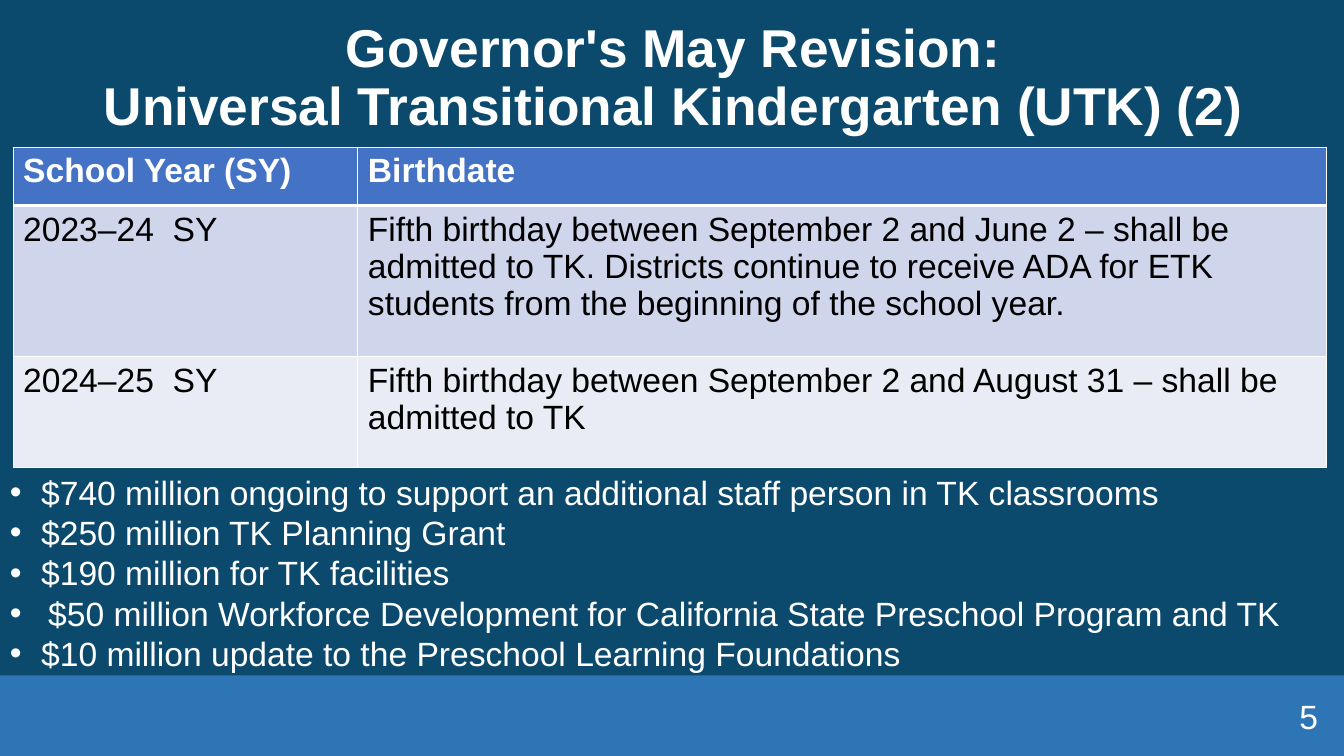
from dataclasses import dataclass

from lxml import etree
from pptx import Presentation
from pptx.dml.color import RGBColor
from pptx.enum.shapes import MSO_SHAPE
from pptx.enum.text import MSO_ANCHOR, PP_ALIGN
from pptx.oxml.ns import qn
from pptx.util import Inches, Pt

RECTANGLE = MSO_SHAPE.RECTANGLE
MIDDLE = MSO_ANCHOR.MIDDLE
LEFT, CENTER, RIGHT = PP_ALIGN.LEFT, PP_ALIGN.CENTER, PP_ALIGN.RIGHT
TITLE_ONLY = 5


@dataclass(frozen=True)
class Theme:
    font: str = "Arial"
    title_size: int = 38
    body_size: int = 24
    background: str = "0C4A6D"
    footer: str = "2E75B6"
    light: str = "FFFFFF"
    dark: str = "000000"
    header_fill: str = "4472C4"
    row_fills: tuple = ("CFD5EA", "E9EBF5")
    border: int = 1
    header_border: int = 3


THEME = Theme()

TITLE_LINES = ("Governor's May Revision:", "Universal Transitional Kindergarten (UTK) (2)")
COLUMN_WIDTHS = (3.42, 9.61)
ROW_HEIGHTS = (0.58, 1.5, 1.1)
BIRTHDATE_ROWS = (
    ("School Year (SY)", "Birthdate"),
    ("2023–24  SY",
     "Fifth birthday between September 2 and June 2 – shall be admitted to TK. "
     "Districts continue to receive ADA for ETK students from the beginning of the school year."),
    ("2024–25  SY",
     "Fifth birthday between September 2 and August 31 – shall be admitted to TK"),
)
FUNDING = (
    ("$740 million ongoing to support an additional staff person in TK classrooms", 0.31),
    ("$250 million TK Planning Grant", 0.31),
    ("$190 million for TK facilities", 0.31),
    ("$50 million Workforce Development for California State Preschool Program and TK", 0.38),
    ("$10 million update to the Preschool Learning Foundations", 0.31),
)


def color(value):
    return RGBColor.from_string(value)


def format_paragraph(paragraph, size, font_color, bold=False, alignment=LEFT):
    paragraph.alignment = alignment
    paragraph.font.name = THEME.font
    paragraph.font.size = Pt(size)
    paragraph.font.bold = bold
    paragraph.font.color.rgb = color(font_color)


def add_footer_band(slide):
    band = slide.shapes.add_shape(RECTANGLE, 0, Inches(6.7), Inches(13.33), Inches(0.8))
    band.shadow.inherit = False
    band.fill.solid()
    band.fill.fore_color.rgb = color(THEME.footer)
    band.line.fill.background()


def set_title(slide, lines):
    title = slide.shapes.title
    title.left, title.top = Inches(0.18), Inches(0.2)
    title.width, title.height = Inches(13), Inches(1.17)
    title.text_frame.vertical_anchor = MIDDLE
    paragraph = title.text_frame.paragraphs[0]
    for index, line in enumerate(lines):
        if index:
            paragraph.add_line_break()
        paragraph.add_run().text = line
    paragraph.line_spacing = 0.9
    format_paragraph(paragraph, THEME.title_size, THEME.light, True, CENTER)


def set_border(cell, side, width):
    properties = cell._tc.get_or_add_tcPr()
    line = etree.SubElement(properties, qn(f"a:ln{side}"), w=str(Pt(width)))
    fill = etree.SubElement(line, qn("a:solidFill"))
    etree.SubElement(fill, qn("a:srgbClr"), val=THEME.light)


def border_width(row_index, side):
    below_header = (row_index, side) in ((0, "B"), (1, "T"))
    return THEME.header_border if below_header else THEME.border


def add_birthdate_table(slide, rows):
    frame = slide.shapes.add_table(
        len(rows), len(COLUMN_WIDTHS), Inches(0.13), Inches(1.46),
        Inches(sum(COLUMN_WIDTHS)), Inches(sum(ROW_HEIGHTS)))
    table = frame.table
    for column, width in zip(table.columns, COLUMN_WIDTHS):
        column.width = Inches(width)
    for row, height in zip(table.rows, ROW_HEIGHTS):
        row.height = Inches(height)
    fills = (THEME.header_fill, *THEME.row_fills)
    for row_index, (texts, fill) in enumerate(zip(rows, fills)):
        is_header = row_index == 0
        for column_index, text in enumerate(texts):
            cell = table.cell(row_index, column_index)
            cell.text = text
            for side in "LRTB":
                set_border(cell, side, border_width(row_index, side))
            cell.fill.solid()
            cell.fill.fore_color.rgb = color(fill)
            format_paragraph(cell.text_frame.paragraphs[0], THEME.body_size,
                             THEME.light if is_header else THEME.dark, is_header)


def add_text_box(slide, left, top, width, height):
    box = slide.shapes.add_textbox(Inches(left), Inches(top), Inches(width), Inches(height))
    box.text_frame.word_wrap = True
    return box.text_frame


def add_bullet(paragraph, indent):
    properties = paragraph._p.get_or_add_pPr()
    properties.set("marL", str(Inches(indent)))
    properties.set("indent", str(-Inches(indent)))
    etree.SubElement(properties, qn("a:buFont"), typeface=THEME.font)
    etree.SubElement(properties, qn("a:buChar"), char="•")


def add_funding_list(slide, items):
    text_frame = add_text_box(slide, 0, 4.63, 13.32, 2.12)
    for index, (text, indent) in enumerate(items):
        paragraph = text_frame.add_paragraph() if index else text_frame.paragraphs[0]
        paragraph.text = text
        add_bullet(paragraph, indent)
        format_paragraph(paragraph, THEME.body_size, THEME.light)


def add_page_number(slide, number):
    text_frame = add_text_box(slide, 10.17, 6.9, 3, 0.4)
    text_frame.vertical_anchor = MIDDLE
    paragraph = text_frame.paragraphs[0]
    paragraph.text = number
    format_paragraph(paragraph, THEME.body_size, THEME.light, alignment=RIGHT)


def main():
    presentation = Presentation()
    presentation.slide_width = Inches(13.33)
    presentation.slide_height = Inches(7.5)
    slide = presentation.slides.add_slide(presentation.slide_layouts[TITLE_ONLY])
    slide.background.fill.solid()
    slide.background.fill.fore_color.rgb = color(THEME.background)
    add_footer_band(slide)
    set_title(slide, TITLE_LINES)
    add_birthdate_table(slide, BIRTHDATE_ROWS)
    add_funding_list(slide, FUNDING)
    add_page_number(slide, "5")
    presentation.save("out.pptx")


if __name__ == "__main__":
    main()
